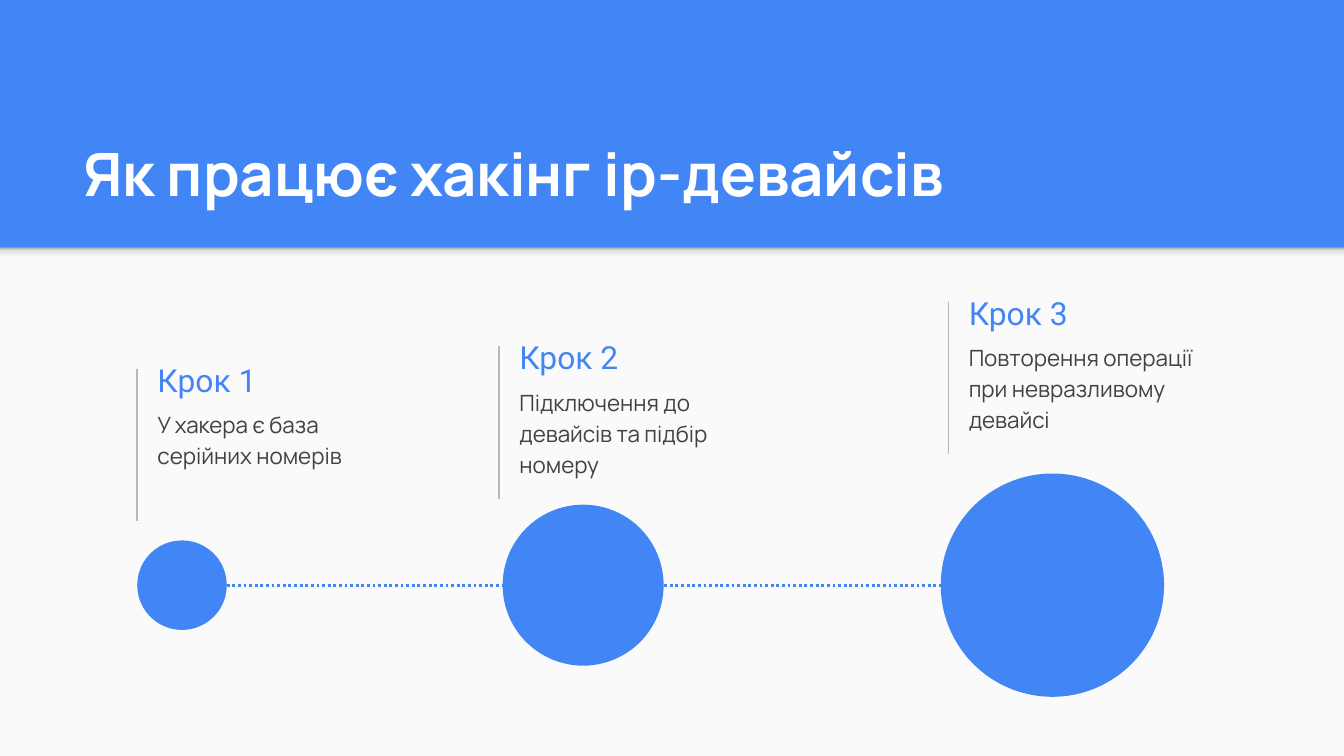
from copy import deepcopy

from pptx import Presentation
from pptx.dml.color import RGBColor
from pptx.enum.dml import MSO_LINE_DASH_STYLE as Dash
from pptx.enum.shapes import MSO_CONNECTOR as Connector, MSO_SHAPE as Shape
from pptx.enum.text import MSO_ANCHOR as Anchor, MSO_AUTO_SIZE as AutoSize, PP_ALIGN as Align
from pptx.oxml.ns import qn
from pptx.util import Emu, Pt

BLUE = RGBColor(0x42, 0x85, 0xF4)
PAPER = RGBColor(0xFA, 0xFA, 0xFA)
WHITE = RGBColor(0xFF, 0xFF, 0xFF)
RULE_GREY = RGBColor(0xB7, 0xB7, 0xB7)
TEXT_GREY = RGBColor(0x42, 0x42, 0x42)
SHADE_STOPS = [
    (0, RGBColor(0xF9, 0xF9, 0xF9)),
    (0.36, RGBColor(0xF9, 0xF9, 0xF9)),
    (0.8, RGBColor(0xDE, 0xDE, 0xDE)),
    (1, RGBColor(0x99, 0x99, 0x99)),
]

WIDTH, HEIGHT = 1920, 1080
HEADER_HEIGHT = 353
AXIS_Y = 836

# Heading, description, left and top of the rule, left and diameter of the circle
STEPS = [
    ("Крок 1", "У хакера є база серійних номерів", 196, 527, 196, 128),
    ("Крок 2", "Підключення до девайсів та підбір номеру", 713, 495, 718, 230),
    ("Крок 3", "Повторення операції при невразливому девайсі", 1355, 431, 1344, 319),
]


def px(length):
    """Turn pixels, 192 to the inch, into EMU."""
    return Emu(round(length * 914400 / 192))


def add_block(slide, kind, left, top, width, height, color):
    shape = slide.shapes.add_shape(kind, px(left), px(top), px(width), px(height))
    shape.shadow.inherit = False
    shape.fill.solid()
    shape.fill.fore_color.rgb = color
    shape.line.fill.background()
    return shape


def add_line(slide, start, end, color, weight):
    line = slide.shapes.add_connector(Connector.STRAIGHT, *map(px, start + end))
    line.line.color.rgb = color
    line.line.width = Pt(weight)
    properties = line._element.spPr
    properties.append(properties.makeelement(qn("a:effectLst"), {}))
    return line


def write(shape, box, text, font, size, color, anchor, bold=False, spacing=1):
    shape.left, shape.top, shape.width, shape.height = map(px, box)
    frame = shape.text_frame
    frame.text = text
    frame.word_wrap = True
    frame.auto_size = AutoSize.NONE
    frame.vertical_anchor = anchor
    frame.margin_left = frame.margin_right = px(19)
    frame.margin_top = frame.margin_bottom = px(19)
    paragraph = frame.paragraphs[0]
    paragraph.alignment = Align.LEFT
    paragraph.line_spacing = spacing
    paragraph.space_before = paragraph.space_after = Pt(0)
    # No bullet and no hanging indent
    properties = paragraph._p.get_or_add_pPr()
    properties.set("marL", "0")
    properties.set("indent", "0")
    properties.append(properties.makeelement(qn("a:buNone"), {}))
    run_font = paragraph.runs[0].font
    run_font.name, run_font.size, run_font.bold = font, Pt(size), bold
    run_font.color.rgb = color


def add_background(slide):
    slide.background.fill.solid()
    slide.background.fill.fore_color.rgb = BLUE
    add_block(slide, Shape.RECTANGLE, 0, HEADER_HEIGHT, WIDTH, HEIGHT - HEADER_HEIGHT, PAPER)
    # Soft shade under the header
    shade = add_block(slide, Shape.RECTANGLE, 0, HEADER_HEIGHT, WIDTH, 23, PAPER)
    shade.fill.gradient()
    shade.fill.gradient_angle = 90
    stop_list = shade._element.spPr.find(qn("a:gradFill")).find(qn("a:gsLst"))
    while len(stop_list) < len(SHADE_STOPS):
        stop_list.append(deepcopy(stop_list[0]))
    for stop, (position, color) in zip(shade.fill.gradient_stops, SHADE_STOPS):
        stop.position = position
        stop.color.rgb = color


def add_step(slide, body, left, top, heading, description):
    add_line(slide, (left, top), (left, top + 218), RULE_GREY, 0.75)
    title = slide.shapes.add_textbox(0, 0, 0, 0)
    write(title, (left + 10, top - 26, 380, 83), heading, "Roboto", 17, BLUE, Anchor.MIDDLE)
    write(body, (left + 10, top + 36, 380, 121), description, "Manrope", 12, TEXT_GREY,
          Anchor.TOP, spacing=1.15)


def add_timeline(slide, circles):
    first_left, first_diameter = circles[0]
    axis = add_line(slide, (first_left + first_diameter, AXIS_Y), (circles[-1][0], AXIS_Y),
                    BLUE, 1.5)
    axis.line.dash_style = Dash.ROUND_DOT
    for left, diameter in circles:
        add_block(slide, Shape.OVAL, left, AXIS_Y - diameter / 2, diameter, diameter, BLUE)


def main():
    presentation = Presentation()
    presentation.slide_width, presentation.slide_height = px(WIDTH), px(HEIGHT)
    # The comparison layout offers a title and four bodies
    slide = presentation.slides.add_slide(presentation.slide_layouts[4])
    title, *bodies, spare = list(slide.placeholders)
    spare._element.getparent().remove(spare._element)

    add_background(slide)
    write(title, (100, 156, 1726, 161), "Як працює хакінг ip-девайсів", "Manrope", 32, WHITE,
          Anchor.BOTTOM, bold=True)
    for body, (heading, description, left, top, _, _) in zip(bodies, STEPS):
        add_step(slide, body, left, top, heading, description)
    add_timeline(slide, [step[4:] for step in STEPS])

    # Bring the placeholders in front of the background
    for placeholder in (title, *bodies):
        slide.shapes._spTree.append(placeholder._element)
    presentation.save("out.pptx")


if __name__ == "__main__":
    main()
